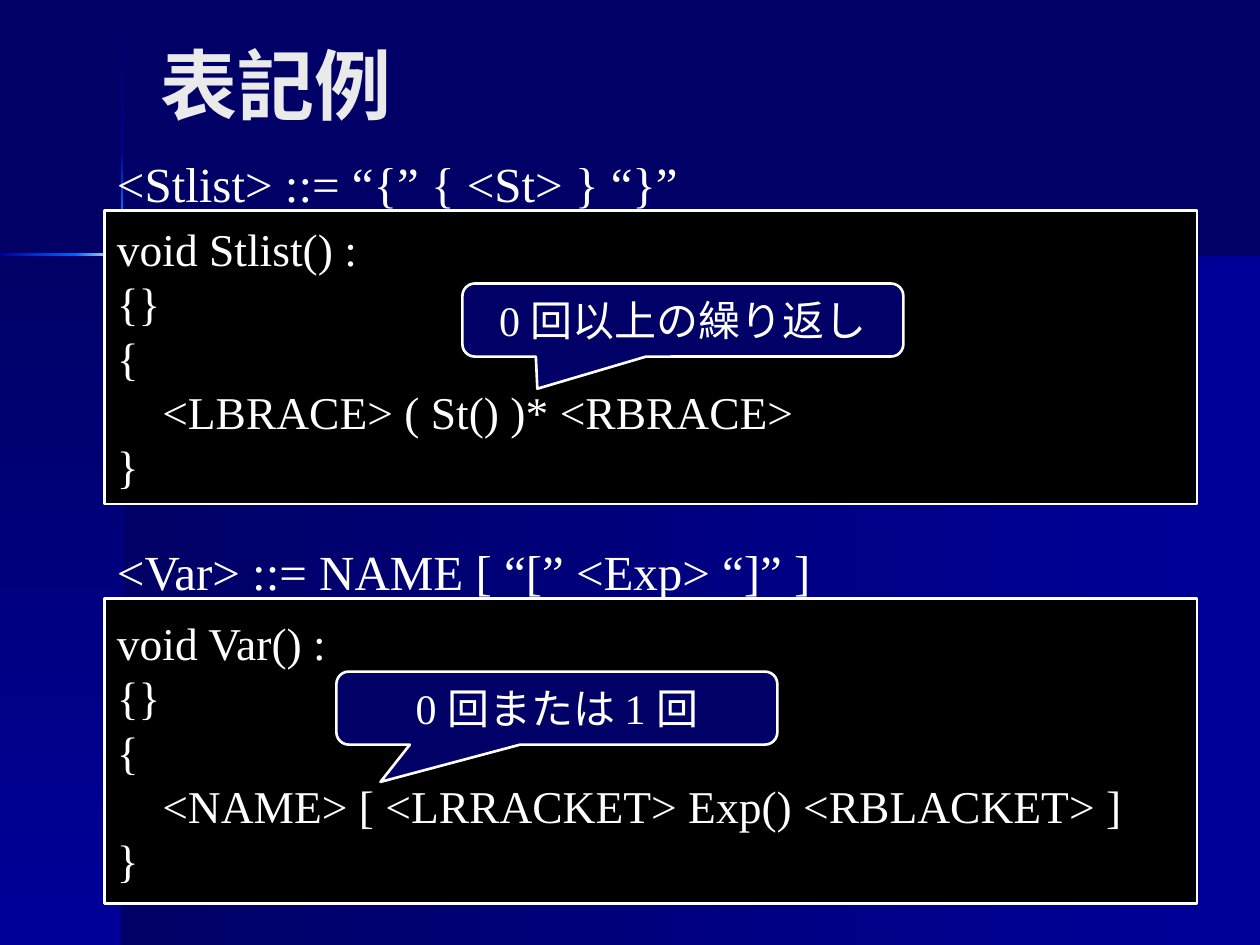
from copy import deepcopy

from pptx import Presentation
from pptx.dml.color import RGBColor
from pptx.enum.shapes import MSO_SHAPE
from pptx.enum.text import MSO_ANCHOR, PP_ALIGN
from pptx.util import Inches, Pt

FONT = "Times New Roman"
NAVY, BLUE, BRIGHT, GLOW = "000066", "000099", "0066FF", "FFFFCC"
WHITE, BLACK, TITLE_GREY = "FFFFFF", "000000", "EAEAEA"
HORIZONTAL, VERTICAL = 0, 270

# left, top, width, height, gradient direction, gradient colours
BACKDROP = [
    (0.97, 2.02, 9.03, 5.48, HORIZONTAL, (NAVY, BLUE)),
    (0, 2.02, 0.97, 5.48, VERTICAL, (NAVY, BLUE)),
    (0.96, 1.65, 0.02, 0.73, VERTICAL, (BRIGHT, GLOW, BRIGHT)),
    (0, 2.01, 0.61, 0.02, HORIZONTAL, (BLUE, BRIGHT)),
    (0.96, 0.01, 0.02, 1.21, VERTICAL, (NAVY, BLUE)),
    (0.96, 2.82, 0.02, 4.68, VERTICAL, (BLUE, NAVY)),
    (1.77, 2.01, 8.23, 0.02, HORIZONTAL, (BLUE, NAVY)),
    (0.96, 1.21, 0.02, 0.44, VERTICAL, (BLUE, BRIGHT)),
    (0.6, 2.01, 0.73, 0.02, HORIZONTAL, (BRIGHT, GLOW, BRIGHT)),
]

# Each rule: grammar, its box, code signature, code body, code box, callout
RULES = [
    ("<Stlist> ::= “{” { <St> } “}”", (0.83, 1.17, 5.58, 0.57),
     "void Stlist() :", "<LBRACE> ( St() )* <RBRACE>", (0.83, 1.67, 8.67, 2.33),
     "0 回以上の繰り返し", (3.67, 2.25, 3.5, 0.58), (-0.33, 0.94)),
    ("<Var> ::= NAME [ “[” <Exp> “]” ]", (0.83, 4.25, 6.17, 0.57),
     "void Var() :", "<NAME> [ <LRRACKET> Exp() <RBLACKET> ]", (0.83, 4.75, 8.67, 2.42),
     "0 回または 1 回", (2.67, 5.33, 3.5, 0.58), (-0.4, 1.01)),
]


def color(hex_value):
    return RGBColor.from_string(hex_value)


def inches(box):
    return [Inches(value) for value in box]


def write(shape, lines, size, hex_color=WHITE, anchor=MSO_ANCHOR.MIDDLE, bold=False, **paragraph_format):
    frame = shape.text_frame
    frame.word_wrap = True
    frame.vertical_anchor = anchor
    frame.text = "\n".join(lines)
    for paragraph in frame.paragraphs:
        for name, value in {"alignment": PP_ALIGN.LEFT, **paragraph_format}.items():
            setattr(paragraph, name, value)
        for run in paragraph.runs:
            for name, value in {"name": FONT, "size": Pt(size), "bold": bold}.items():
                setattr(run.font, name, value)
            run.font.color.rgb = color(hex_color)


def add_gradient_block(slide, box, angle, colors):
    block = slide.shapes.add_shape(MSO_SHAPE.RECTANGLE, *inches(box))
    block.shadow.inherit = False
    block.line.fill.background()
    block.fill.gradient()
    block.fill.gradient_angle = angle
    stop_list = block._element.spPr.find(".//{*}gsLst")
    for _ in colors[2:]:
        stop_list.append(deepcopy(stop_list[-1]))
    for index, (stop, hex_value) in enumerate(zip(block.fill.gradient_stops, colors)):
        stop.position = index / (len(colors) - 1)
        stop.color.rgb = color(hex_value)


def add_outlined_shape(slide, kind, box, fill):
    shape = slide.shapes.add_shape(kind, *inches(box))
    shape.shadow.inherit = False
    shape.fill.solid()
    shape.fill.fore_color.rgb = color(fill)
    shape.line.color.rgb = color(WHITE)
    shape.line.width = Pt(1.5)
    return shape


def add_grammar(slide, text, box):
    write(slide.shapes.add_textbox(*inches(box)), [text], 28, anchor=MSO_ANCHOR.TOP)


def add_code(slide, signature, body, box):
    shape = add_outlined_shape(slide, MSO_SHAPE.RECTANGLE, box, BLACK)
    write(shape, [signature, "{}", "{", body, "}"], 26, line_spacing=Pt(31))
    body_paragraph = shape.text_frame.paragraphs[3]
    body_paragraph._p.get_or_add_pPr().set("marL", str(Inches(0.36)))


def add_callout(slide, text, box, tip):
    shape = add_outlined_shape(slide, MSO_SHAPE.ROUNDED_RECTANGULAR_CALLOUT, box, NAVY)
    for index, value in enumerate((*tip, 0.17)):
        shape.adjustments[index] = value
    write(shape, [text], 24, alignment=PP_ALIGN.CENTER)


def set_title(slide, text, box):
    title = slide.shapes.title
    title.left, title.top, title.width, title.height = inches(box)
    write(title, [text], 44, TITLE_GREY, MSO_ANCHOR.BOTTOM, bold=True)


def main():
    presentation = Presentation()
    presentation.slide_width, presentation.slide_height = Inches(10), Inches(7.5)
    slide = presentation.slides.add_slide(presentation.slide_layouts[5])
    slide.background.fill.solid()
    slide.background.fill.fore_color.rgb = color(NAVY)

    for *box, angle, colors in BACKDROP:
        add_gradient_block(slide, box, angle, colors)
    set_title(slide, "表記例", (1.17, 0.33, 8.25, 0.75))
    for grammar, grammar_box, signature, body, code_box, note, note_box, tip in RULES:
        add_grammar(slide, grammar, grammar_box)
        add_code(slide, signature, body, code_box)
        add_callout(slide, note, note_box, tip)

    presentation.save("out.pptx")


if __name__ == "__main__":
    main()
